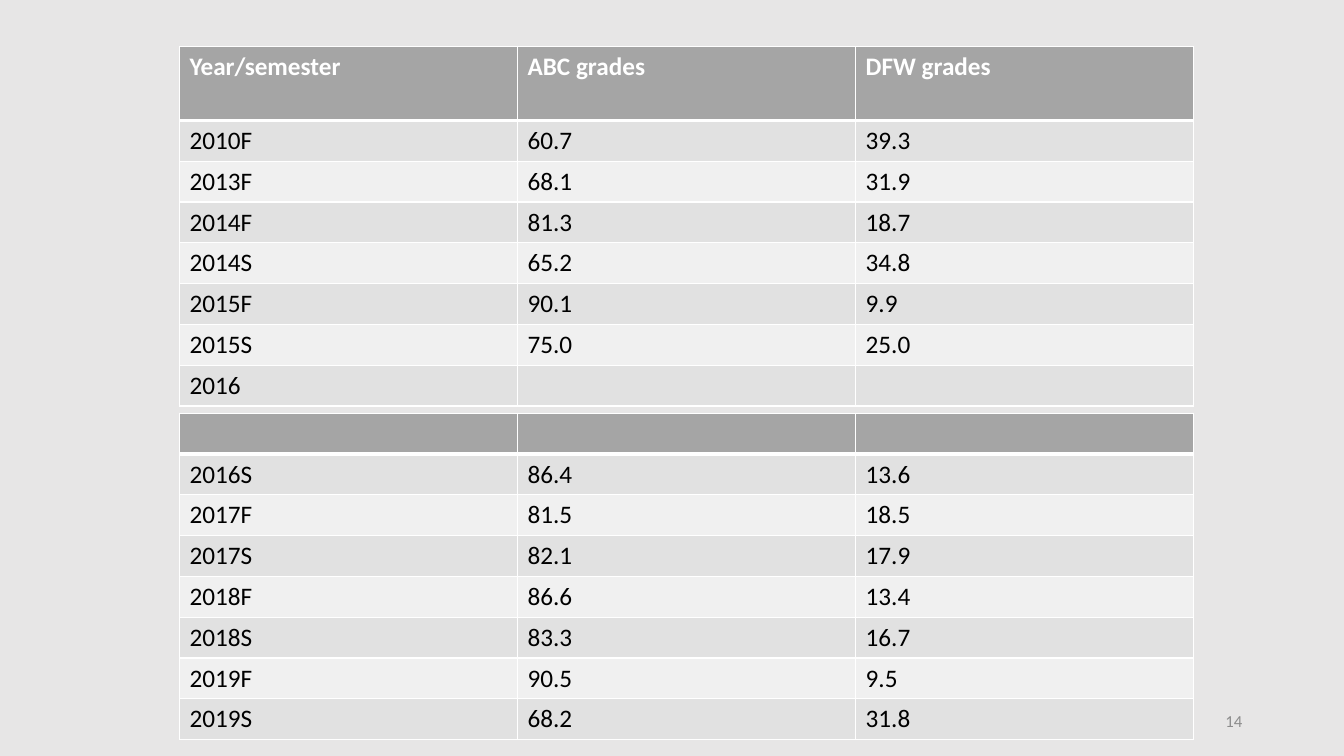
from lxml.etree import SubElement
from pptx import Presentation
from pptx.dml.color import RGBColor
from pptx.enum.text import MSO_ANCHOR, PP_ALIGN
from pptx.oxml.ns import qn
from pptx.util import Inches, Pt

BACKGROUND = RGBColor(0xE7, 0xE6, 0xE6)
HEADER = RGBColor(0xA5, 0xA5, 0xA5)
DARK_BAND = RGBColor(0xE1, 0xE1, 0xE1)
LIGHT_BAND = RGBColor(0xF0, 0xF0, 0xF0)
WHITE = RGBColor(0xFF, 0xFF, 0xFF)
BLACK = RGBColor(0, 0, 0)
NUMBER_GREY = RGBColor(0x8C, 0x8C, 0x8C)
FONT = "Calibri"

TABLE_LEFT, TABLE_WIDTH = 1.78, 10.06
ROW_HEIGHT = 3.24 / 8

EARLY_GRADES = [
    ("Year/semester", "ABC grades", "DFW grades"),
    ("2010F", "60.7", "39.3"),
    ("2013F", "68.1", "31.9"),
    ("2014F", "81.3", "18.7"),
    ("2014S", "65.2", "34.8"),
    ("2015F", "90.1", "9.9"),
    ("2015S", "75.0", "25.0"),
    ("2016", "", ""),
]
LATE_GRADES = [
    ("", "", ""),
    ("2016S", "86.4", "13.6"),
    ("2017F", "81.5", "18.5"),
    ("2017S", "82.1", "17.9"),
    ("2018F", "86.6", "13.4"),
    ("2018S", "83.3", "16.7"),
    ("2019F", "90.5", "9.5"),
    ("2019S", "68.2", "31.8"),
]


def add_borders(cell, top_width, bottom_width):
    properties = cell._tc.get_or_add_tcPr()
    widths = {"a:lnL": 1, "a:lnR": 1, "a:lnT": top_width, "a:lnB": bottom_width}
    for side, width in widths.items():
        line = SubElement(properties, qn(side), w=str(Pt(width)))
        SubElement(SubElement(line, qn("a:solidFill")), qn("a:srgbClr"), val=str(WHITE))


deck = Presentation()
deck.slide_width, deck.slide_height = Inches(13.33), Inches(7.5)
page = deck.slides.add_slide(deck.slide_layouts[6])
page.background.fill.solid()
page.background.fill.fore_color.rgb = BACKGROUND

number_box = page.shapes.add_textbox(Inches(9.42), Inches(6.95), Inches(3), Inches(0.4))
number_box.text_frame.word_wrap = True
number_box.text_frame.vertical_anchor = MSO_ANCHOR.MIDDLE
para = number_box.text_frame.paragraphs[0]
para.text = "14"
para.alignment = PP_ALIGN.RIGHT
para.font.name = FONT
para.font.size = Pt(12)
para.font.color.rgb = NUMBER_GREY

for grades, top, height in ((EARLY_GRADES, 0.46, 3.57), (LATE_GRADES, 4.1, 3.24)):
    table = page.shapes.add_table(
        len(grades), len(grades[0]),
        Inches(TABLE_LEFT), Inches(top), Inches(TABLE_WIDTH), Inches(height),
    ).table
    table.horz_banding = False
    for row_index, values in enumerate(grades):
        is_header = row_index == 0
        body_height = ROW_HEIGHT * (len(grades) - 1)
        table.rows[row_index].height = Inches(height - body_height if is_header else ROW_HEIGHT)
        band = DARK_BAND if row_index % 2 else LIGHT_BAND
        for column_index, value in enumerate(values):
            cell = table.cell(row_index, column_index)
            add_borders(cell, 3 if row_index == 1 else 1, 3 if is_header else 1)
            cell.fill.solid()
            cell.fill.fore_color.rgb = HEADER if is_header else band
            para = cell.text_frame.paragraphs[0]
            para.text = value
            para.font.name = FONT
            para.font.size = Pt(18)
            para.font.bold = is_header
            para.font.color.rgb = WHITE if is_header else BLACK

deck.save("out.pptx")
